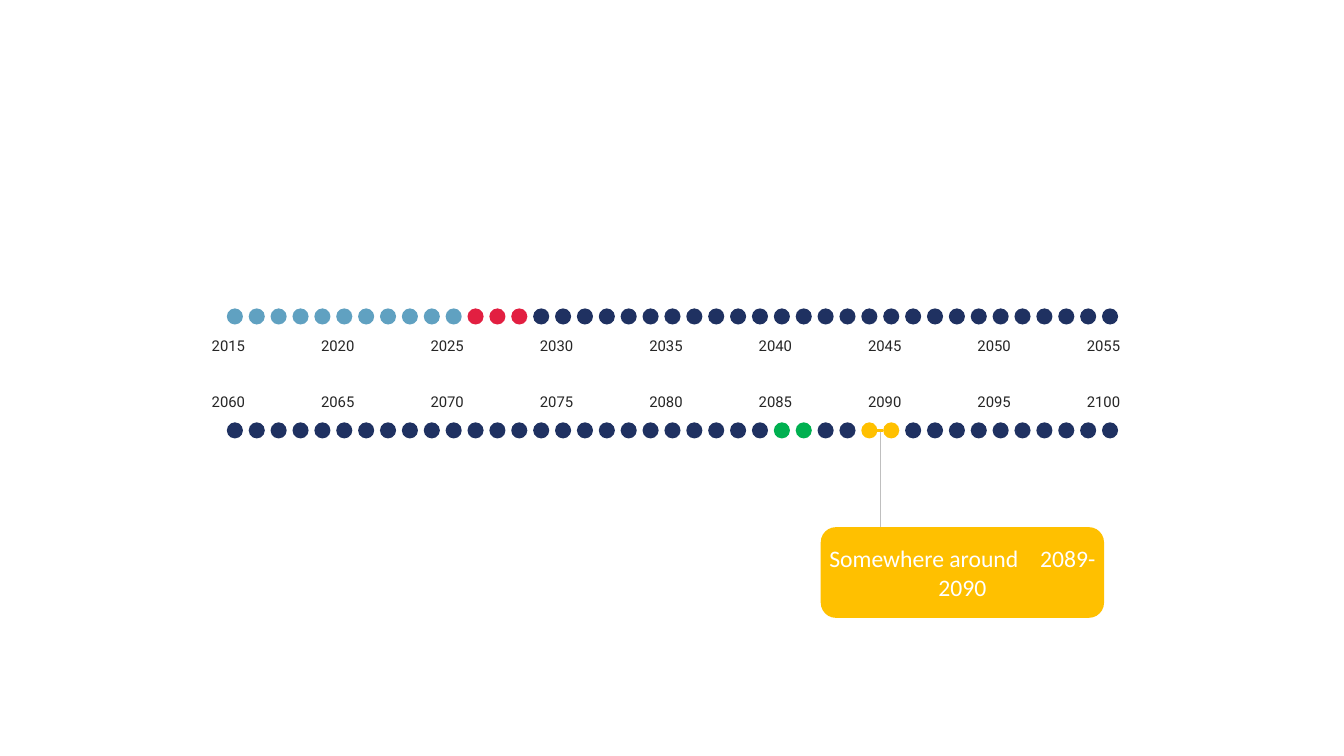
from lxml import etree
from pptx import Presentation
from pptx import util as u
from pptx.dml.color import RGBColor
from pptx.enum import shapes, text
from pptx.oxml import ns

COLOURS = {
    "past": "60A1C1",
    "near": "E21F41",
    "future": "1F3161",
    "milestone": "00B050",
    "target": "FFC000",
    "stem": "BFBFBF",
    "label": "262626",
    "white": "FFFFFF",
}
YEARS_PER_ROW = 41
LABEL_STEP = 5
PITCH = 8.68 / (YEARS_PER_ROW - 1)
DOT_LEFT, DOT_SIZE = 2.25, 0.16
LABEL_LEFT = 2.1
PERIODS = {
    "past": range(2015, 2026),
    "near": range(2026, 2029),
    "milestone": range(2085, 2087),
    "target": range(2089, 2091),
}


def rgb(name):
    """Return the named colour."""
    return RGBColor.from_string(COLOURS[name])


def add_run(paragraph, words, font, size, colour):
    """Append a styled run and return it."""
    run = paragraph.add_run()
    run.text = words
    run.font.name = font
    run.font.size = u.Pt(size)
    run.font.color.rgb = rgb(colour)
    return run


def set_frame(frame, margin, wrap):
    """Set equal margins, wrapping and middle anchoring."""
    frame.margin_left = frame.margin_right = u.Inches(margin)
    frame.margin_top = frame.margin_bottom = u.Inches(margin)
    frame.word_wrap = wrap
    frame.vertical_anchor = text.MSO_ANCHOR.MIDDLE


def add_solid(slide, preset, left, top, width, height, colour):
    """Add a filled shape without outline or shadow."""
    solid = slide.shapes.add_shape(
        preset, u.Inches(left), u.Inches(top), u.Inches(width), u.Inches(height))
    solid.shadow.inherit = False
    solid.fill.solid()
    solid.fill.fore_color.rgb = rgb(colour)
    solid.line.fill.background()
    return solid


def add_line(slide, start, end, colour, weight):
    """Add a straight line between two points."""
    line = slide.shapes.add_connector(
        shapes.MSO_CONNECTOR.STRAIGHT, *map(u.Inches, start + end))
    line.line.color.rgb = rgb(colour)
    line.line.width = u.Pt(weight)
    etree.SubElement(line._element.spPr, ns.qn("a:effectLst"))


def add_year_label(slide, year, left, top):
    """Add the label of one year."""
    label = slide.shapes.add_textbox(
        u.Inches(left), u.Inches(top), u.Inches(0.45), u.Inches(0.24))
    set_frame(label.text_frame, 0, True)
    add_run(label.text_frame.paragraphs[0], str(year), "Roboto", 10.6, "label")


def period_of(year):
    """Return the colour name of the period that holds a year."""
    return next((name for name, years in PERIODS.items() if year in years), "future")


def add_year_row(slide, first_year, dot_top, label_top):
    """Add a row of year dots with a label every five years."""
    for index in range(YEARS_PER_ROW):
        year = first_year + index
        add_solid(slide, shapes.MSO_SHAPE.OVAL, DOT_LEFT + index * PITCH, dot_top,
                  DOT_SIZE, DOT_SIZE, period_of(year))
        if index % LABEL_STEP == 0:
            add_year_label(slide, year, LABEL_LEFT + index * PITCH, label_top)


def add_callout(slide):
    """Add the forecast box with its stem."""
    add_line(slide, (8.73, 4.27), (8.73, 5.29), "stem", 0.75)
    box = add_solid(slide, shapes.MSO_SHAPE.ROUNDED_RECTANGLE,
                    8.14, 5.23, 2.81, 0.9, "target")
    set_frame(box.text_frame, 0.04, True)
    forecast = box.text_frame.paragraphs[0]
    forecast.alignment = text.PP_ALIGN.CENTER
    forecast.space_before = u.Pt(4.2)
    forecast.space_after = u.Pt(8.4)
    add_run(forecast, "Somewhere around", "Calibri", 16.9, "white")
    gap = add_run(forecast, " ", "Calibri", 16.9, "white")
    gap.font._element.set("spc", "1150")
    add_run(forecast, "2089-2090", "Calibri", 16.9, "white")


def main():
    """Build the timeline slide."""
    deck = Presentation()
    deck.slide_width, deck.slide_height = u.Inches(13.33), u.Inches(7.5)
    slide = deck.slides.add_slide(deck.slide_layouts[6])
    add_year_row(slide, 2015, 3.06, 3.31)
    add_callout(slide)
    add_year_row(slide, 2060, 4.19, 3.86)
    add_line(slide, (8.76, 4.27), (8.7, 4.27), "target", 2)
    deck.save("out.pptx")


if __name__ == "__main__":
    main()
